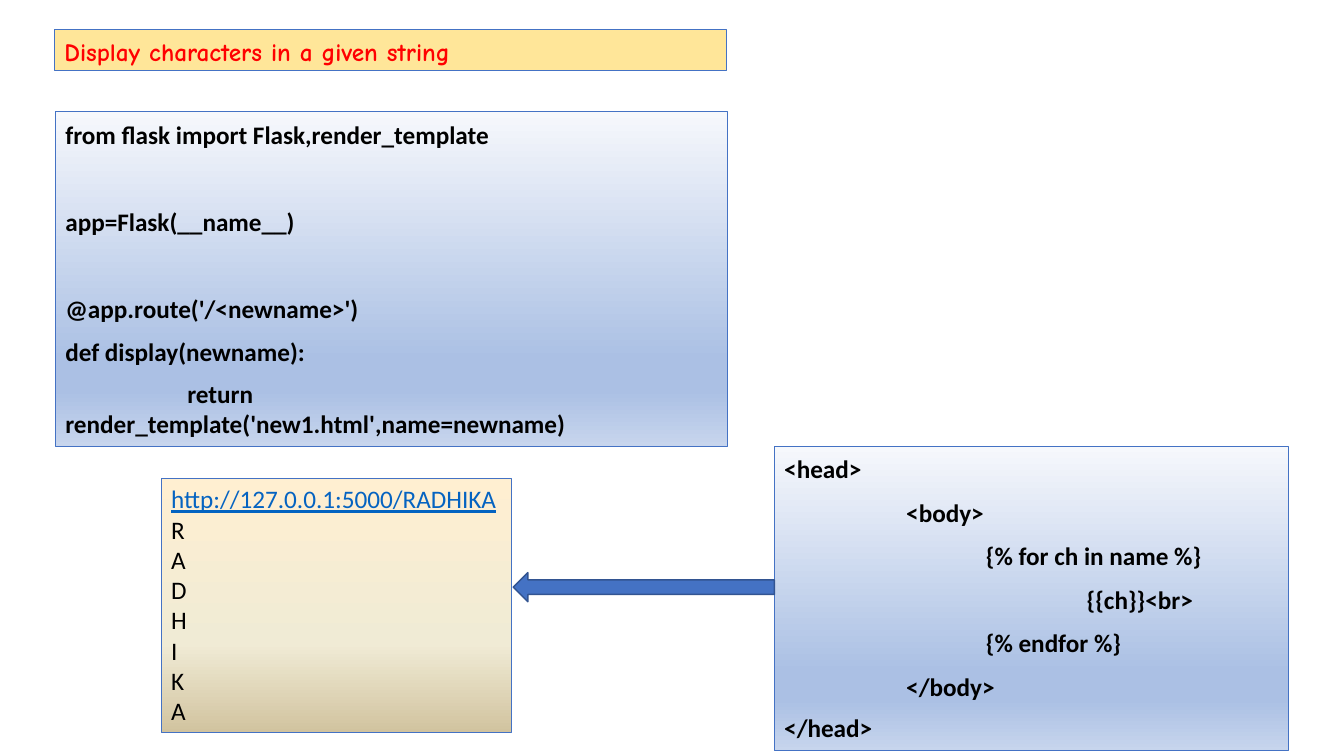
from pptx import Presentation
from pptx import util as u
from pptx.dml.color import RGBColor
from pptx.enum import shapes, text
from pptx.oxml.ns import qn
from lxml import etree

PX = 9144  # EMU per px, 100 px to the inch
RED = RGBColor(0xFF, 0x00, 0x00)
BLACK = RGBColor(0x00, 0x00, 0x00)
LINK = RGBColor(0x05, 0x63, 0xC1)
GOLD = RGBColor(0xFF, 0xE6, 0x99)
BLUE = RGBColor(0x44, 0x72, 0xC4)
NAVY = RGBColor(0x32, 0x54, 0x91)
SKY = [(0, RGBColor(0xF6, 0xF8, 0xFC)), (74, RGBColor(0xAB, 0xC0, 0xE4)),
       (83, RGBColor(0xAB, 0xC0, 0xE4)), (100, RGBColor(0xC7, 0xD5, 0xED))]
SAND = [(0, RGBColor(0xFF, 0xEF, 0xD1)), (65, RGBColor(0xF0, 0xEB, 0xD5)),
        (100, RGBColor(0xD1, 0xC3, 0x9F))]

CODE = {"name": "Calibri", "size": u.Pt(18), "bold": True}
HEAD = {"name": "Comic Neue", "size": u.Pt(18), "bold": True}
PLAIN = {"name": "Calibri", "size": u.Pt(18), "bold": False}
URL = {**PLAIN, "underline": True}
LOOSE = {"line_spacing": 1.07, "space_after": u.Pt(8)}
GAP = {"line_spacing": 1.07, "space_after": u.Pt(39)}
TIGHT = {"line_spacing": 1.0, "space_after": u.Pt(0)}
STEPS = [0, 121, 200, 300]  # first-line indent per nesting level


def put(item, form):
    for key, value in form.items():
        setattr(item, key, value)


class Page:
    def __init__(self, deck):
        self.slide = deck.slides.add_slide(deck.slide_layouts[6])

    def shape(self, kind, spot, fill, line=BLUE, width=0.75):
        item = self.slide.shapes.add_shape(kind, *(n * PX for n in spot))
        item.shadow.inherit = False
        if isinstance(fill, list):
            self.blend(item, fill)
        else:
            item.fill.solid()
            item.fill.fore_color.rgb = fill
        item.line.color.rgb = line
        item.line.width = u.Pt(width)
        return item

    def blend(self, item, stops):
        """Fill from top to bottom through (percent, colour) stops."""
        item.fill.gradient()
        item.fill.gradient_angle = 270
        group = item._element.spPr.find(".//" + qn("a:gsLst"))
        for old in list(group):
            group.remove(old)
        for spot, color in stops:
            stop = etree.SubElement(group, qn("a:gs"), pos=str(spot * 1000))
            etree.SubElement(stop, qn("a:srgbClr"), val=str(color))

    def box(self, spot, fill, lines, wrap=True):
        """Draw a text box; each line is (words, font, colour, spacing, level)."""
        item = self.shape(shapes.MSO_SHAPE.RECTANGLE, spot, fill)
        frame = item.text_frame
        put(frame, {"word_wrap": wrap, "vertical_anchor": text.MSO_ANCHOR.TOP})
        for i, (words, font, color, space, level) in enumerate(lines):
            para = frame.add_paragraph() if i else frame.paragraphs[0]
            put(para, {"alignment": text.PP_ALIGN.LEFT, **space})
            if level:
                para._p.get_or_add_pPr().set("indent", str(STEPS[level] * PX))
            run = para.add_run()
            run.text = words
            put(run.font, font)
            run.font.color.rgb = color

    def code(self, spot, lines):
        self.box(spot, SKY, [(words, CODE, BLACK, space, level)
                             for words, space, level in lines])

    def arrow(self, spot):
        self.shape(shapes.MSO_SHAPE.LEFT_ARROW, spot, BLUE, NAVY, 1)


def main():
    deck = Presentation()
    put(deck, {"slide_width": 1333 * PX, "slide_height": 750 * PX})
    page = Page(deck)
    page.box((54, 29, 667, 41), GOLD,
             [("Display characters in a given string", HEAD, RED, LOOSE, 0)])
    page.code((55, 111, 667, 332), [
        ("from flask import Flask,render_template", GAP, 0),
        ("app=Flask(__name__)", GAP, 0),
        ("@app.route('/<newname>')", LOOSE, 0),
        ("def display(newname):", LOOSE, 0),
        ("return render_template('new1.html',name=newname)", TIGHT, 1),
    ])
    page.code((768, 443, 510, 302), [
        ("<head>", LOOSE, 0),
        ("<body>", LOOSE, 1),
        ("{% for ch in name %}", LOOSE, 2),
        ("{{ch}}<br>", LOOSE, 3),
        ("{% endfor %}", LOOSE, 2),
        ("</body>", LOOSE, 1),
        ("</head>", TIGHT, 0),
    ])
    page.box((160, 475, 347, 252), SAND,
             [("http://127.0.0.1:5000/RADHIKA", URL, LINK, TIGHT, 0)]
             + [(letter, PLAIN, BLACK, TIGHT, 0) for letter in "RADHIKA"],
             wrap=False)
    page.arrow((509, 568, 259, 29))
    deck.save("out.pptx")


if __name__ == "__main__":
    main()
